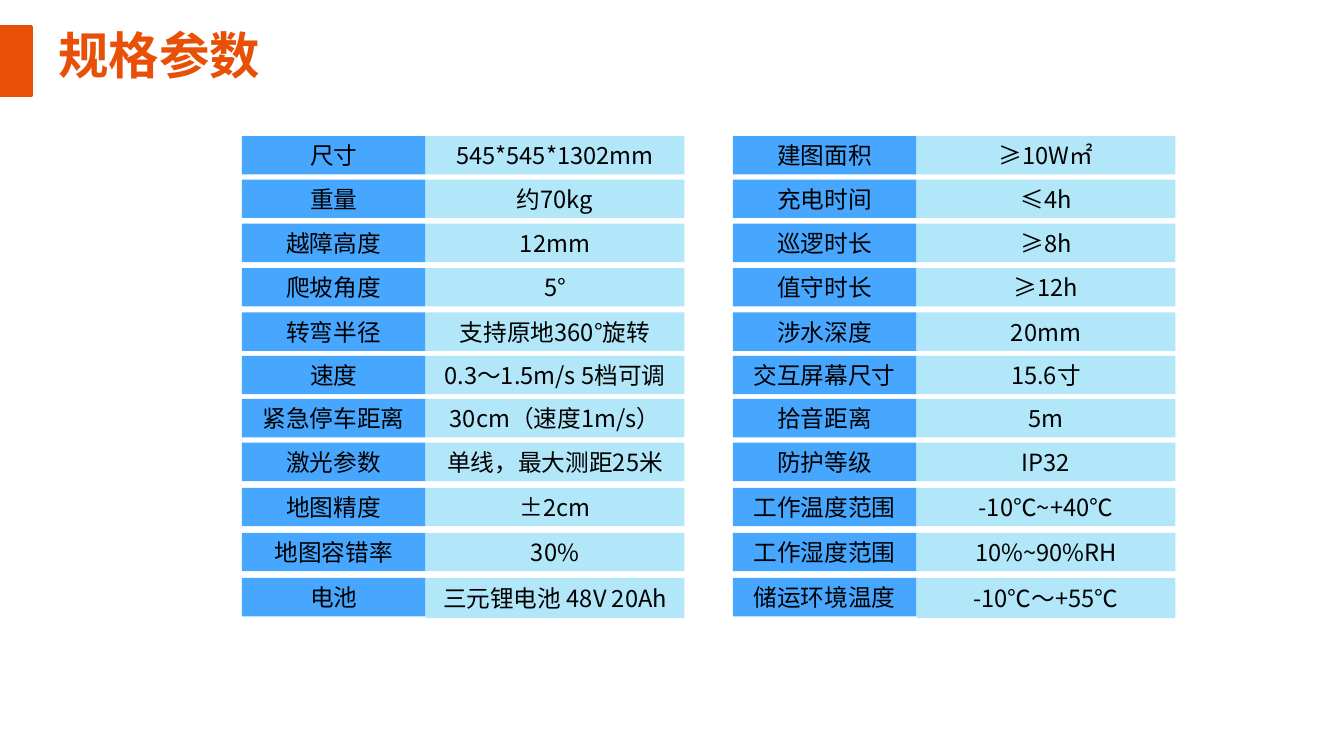
from dataclasses import dataclass
from lxml.etree import SubElement
from pptx import Presentation
from pptx.dml.color import RGBColor as RGB
from pptx.enum.shapes import MSO_SHAPE as Kind
from pptx.enum.text import MSO_ANCHOR as Anchor, PP_ALIGN as Align
from pptx.oxml.ns import qn
from pptx.util import Pt


@dataclass(frozen=True)
class Theme:
    font: str = "Noto Sans CJK SC"
    brand: str = "E84F07"
    edge: str = "E84E06"
    label: str = "47A7FF"
    value: str = "00B0F0"
    ink: str = "000000"
    big: float = 36
    body: float = 16.9


def write(frame, text, font, size, color, bold=False, align=Align.LEFT,
          anchor=Anchor.TOP, lead=1.0):
    """Put one formatted line of text into a frame without insets."""
    frame.margin_left = frame.margin_right = 0
    frame.margin_top = frame.margin_bottom = 0
    frame.word_wrap = True
    frame.vertical_anchor = anchor
    para = frame.paragraphs[0]
    para.alignment = align
    para.line_spacing = lead
    run = para.add_run()
    run.text = text
    run.font.size = Pt(size)
    run.font.bold = bold
    run.font.color.rgb = RGB.from_string(color)
    run.font.name = font
    # East Asian letters need their own font entry
    SubElement(run.font._element, qn("a:ea"), typeface=font)


class Deck:
    def __init__(self, theme):
        self.theme = theme
        self.file = Presentation()
        self.file.slide_width, self.file.slide_height = Pt(960), Pt(540)
        self.slide = self.file.slides.add_slide(self.file.slide_layouts[6])

    def rect(self, x, y, w, h, fill, alpha=None, line=None):
        box = self.slide.shapes.add_shape(Kind.RECTANGLE, Pt(x), Pt(y), Pt(w), Pt(h))
        box.shadow.inherit = False
        box.fill.solid()
        box.fill.fore_color.rgb = RGB.from_string(fill)
        if alpha:
            tint = box._element.spPr.find(qn("a:solidFill"))[0]
            SubElement(tint, qn("a:alpha"), val=str(alpha * 1000))
        if line:
            box.line.color.rgb = RGB.from_string(line)
            box.line.width = Pt(2)
        else:
            box.line.fill.background()
        return box

    def title(self, text, x, y, w, h):
        box = self.slide.shapes.add_textbox(Pt(x), Pt(y), Pt(w), Pt(h))
        write(box.text_frame, text, self.theme.font, self.theme.big,
              self.theme.brand, bold=True, lead=0.9)

    def cell(self, text, x, y, w, h, fill, alpha=None):
        box = self.rect(x, y, w, h, fill, alpha)
        write(box.text_frame, text, self.theme.font, self.theme.body,
              self.theme.ink, align=Align.CENTER, anchor=Anchor.MIDDLE)

    def panel(self, x, tops, rows):
        """Stack label and value pairs; the last value is a little taller."""
        wide, tall = 131.2, 27.4
        for top, (label, value) in zip(tops, rows):
            high = 28.8 if top == tops[-1] else tall
            self.cell(label, x, top, wide, tall, self.theme.label)
            self.cell(value, x + wide, top, 185, high, self.theme.value, alpha=30)


TOPS = [97.2, 128.3, 159.8, 191.5, 223.2, 254.2, 285, 316.2, 348.4, 380.6, 412.8]

LEFT = [
    ("尺寸", "545*545*1302mm"),
    ("重量", "约70kg"),
    ("越障高度", "12mm"),
    ("爬坡角度", "5°"),
    ("转弯半径", "支持原地360°旋转"),
    ("速度", "0.3～1.5m/s 5档可调"),
    ("紧急停车距离", "30cm（速度1m/s）"),
    ("激光参数", "单线，最大测距25米"),
    ("地图精度", "±2cm"),
    ("地图容错率", "30%"),
    ("电池", "三元锂电池 48V 20Ah"),
]
RIGHT = [
    ("建图面积", "≥10W㎡"),
    ("充电时间", "≤4h"),
    ("巡逻时长", "≥8h"),
    ("值守时长", "≥12h"),
    ("涉水深度", "20mm"),
    ("交互屏幕尺寸", "15.6寸"),
    ("拾音距离", "5m"),
    ("防护等级", "IP32"),
    ("工作温度范围", "-10℃~+40℃"),
    ("工作湿度范围", "10%~90%RH"),
    ("储运环境温度", "-10℃～+55℃"),
]


def main():
    theme = Theme()
    deck = Deck(theme)
    # Heading
    deck.rect(0, 18.7, 22.8, 49.9, theme.brand, line=theme.edge)
    deck.title("规格参数", 41.8, 22.3, 530, 44)
    # Two panels of specifications
    for x, rows in ((172.8, LEFT), (523.5, RIGHT)):
        deck.panel(x, TOPS, rows)
    deck.file.save("out.pptx")


if __name__ == "__main__":
    main()
